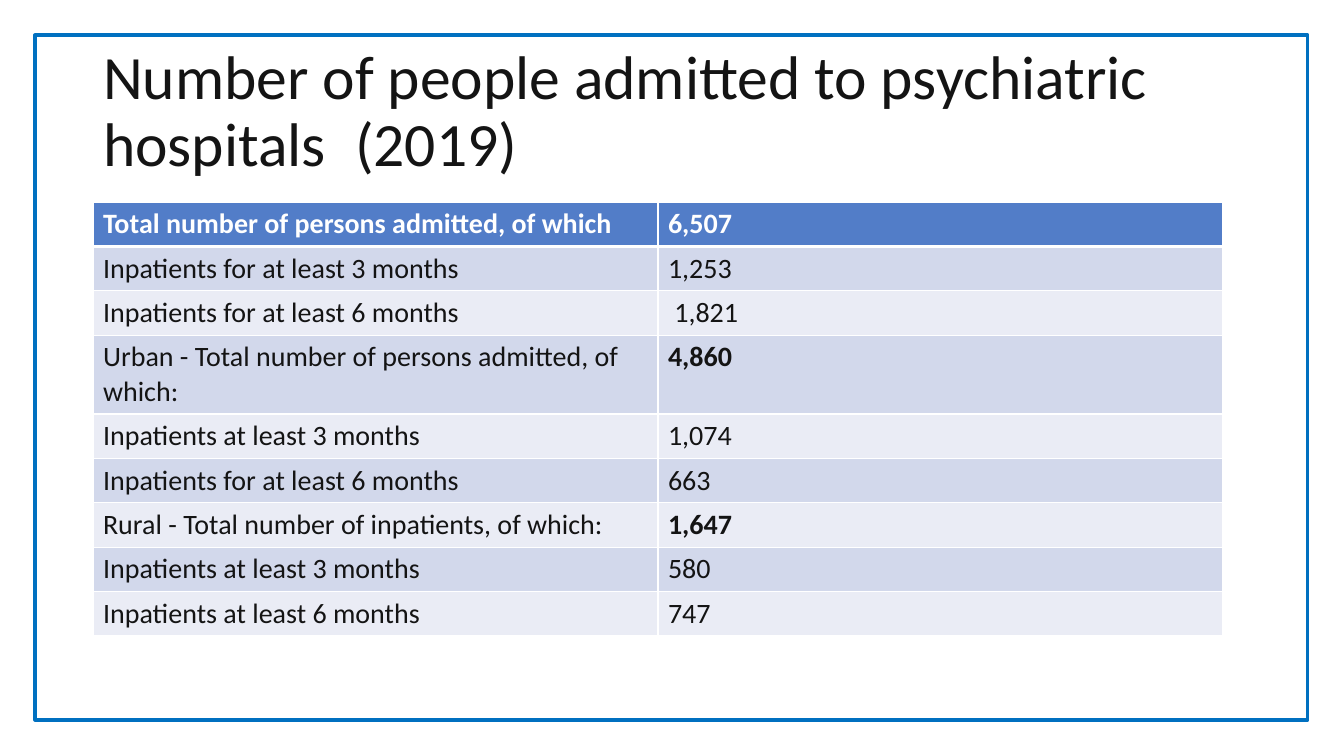
from lxml import etree
from pptx import Presentation
from pptx.dml.color import RGBColor
from pptx.enum.shapes import MSO_SHAPE
from pptx.enum.text import MSO_ANCHOR, MSO_AUTO_SIZE, PP_ALIGN
from pptx.oxml.ns import qn
from pptx.util import Emu, Pt

COLORS = {
    "text": "000000",
    "paper": "FFFFFF",
    "header": "4472C4",
    "band_dark": "CFD5EA",
    "band_light": "E9EBF5",
    "frame": "0070C0",
}
FONT = "Calibri"
EMU_PER_PX = 914400 / 100.8

# Label, value, value is bold
ADMISSIONS = [
    ("Total number of persons admitted, of which", "6,507", True),
    ("Inpatients for at least 3 months", "1,253", False),
    ("Inpatients for at least 6 months", " 1,821", False),
    ("Urban - Total number of persons admitted, of which:", "4,860", True),
    ("Inpatients at least 3 months", "1,074", False),
    ("Inpatients for at least 6 months", "663", False),
    ("Rural - Total number of inpatients, of which:", "1,647", True),
    ("Inpatients at least 3 months", "580", False),
    ("Inpatients at least 6 months", "747", False),
]


def px(length):
    return Emu(round(length * EMU_PER_PX))


def rgb(name):
    return RGBColor.from_string(COLORS[name])


class SlideBuilder:
    def __init__(self, page):
        self.page = page

    def style(self, paragraph, size, color, bold=False):
        for span in paragraph.runs:
            span.font.name = FONT
            span.font.size = Pt(size)
            span.font.bold = bold
            span.font.color.rgb = rgb(color)

    def title(self, text, left, top, width, height):
        box = self.page.shapes.title
        box.left, box.top = px(left), px(top)
        box.width, box.height = px(width), px(height)
        frame = box.text_frame
        frame.text = text
        frame.word_wrap = True
        frame.auto_size = MSO_AUTO_SIZE.NONE
        frame.vertical_anchor = MSO_ANCHOR.MIDDLE
        para = frame.paragraphs[0]
        para.alignment = PP_ALIGN.LEFT
        para.line_spacing = 0.9
        self.style(para, 44, "text")

    def borders(self, cell, widths):
        properties = cell._tc.get_or_add_tcPr()
        for side, width in widths.items():
            line = etree.SubElement(properties, qn(f"a:ln{side}"), w=str(Pt(width)))
            fill = etree.SubElement(line, qn("a:solidFill"))
            etree.SubElement(fill, qn("a:srgbClr"), val=COLORS["paper"])

    def cell(self, cell, text, row, bold):
        rule = {"L": 1, "R": 1, "T": 3 if row == 1 else 1, "B": 3 if row == 0 else 1}
        self.borders(cell, rule)
        band = "band_dark" if row % 2 else "band_light"
        cell.fill.solid()
        cell.fill.fore_color.rgb = rgb("header" if row == 0 else band)
        cell.text = text
        color = "paper" if row == 0 else "text"
        self.style(cell.text_frame.paragraphs[0], 20, color, bold)

    def table(self, rows, left, top, column_width, row_height):
        grid = self.page.shapes.add_table(
            len(rows), 2, px(left), px(top),
            px(2 * column_width), px(row_height * len(rows))).table
        for column in grid.columns:
            column.width = px(column_width)
        for index, (label, value, bold) in enumerate(rows):
            grid.rows[index].height = px(row_height)
            self.cell(grid.cell(index, 0), label, index, index == 0)
            self.cell(grid.cell(index, 1), value, index, bold)

    def frame(self, left, top, width, height, opacity):
        box = self.page.shapes.add_shape(
            MSO_SHAPE.RECTANGLE, px(left), px(top), px(width), px(height))
        box.shadow.inherit = False
        box.fill.solid()
        box.fill.fore_color.rgb = rgb("paper")
        shade = box._element.spPr.find(qn("a:solidFill"))[0]
        etree.SubElement(shade, qn("a:alpha"), val=str(opacity * 1000))
        box.line.color.rgb = rgb("frame")
        box.line.width = Pt(2.25)


def main():
    deck = Presentation()
    deck.slide_width, deck.slide_height = px(1344), px(756)
    builder = SlideBuilder(deck.slides.add_slide(deck.slide_layouts[5]))

    # Heading
    builder.title("Number of people admitted to psychiatric hospitals \t(2019)",
                  93, 40, 1159, 146)
    # Admission figures
    builder.table(ADMISSIONS, 93, 202, 565, 41)
    # Translucent border around the page
    builder.frame(35, 35, 1273, 685, 8)

    deck.save("out.pptx")


if __name__ == "__main__":
    main()
